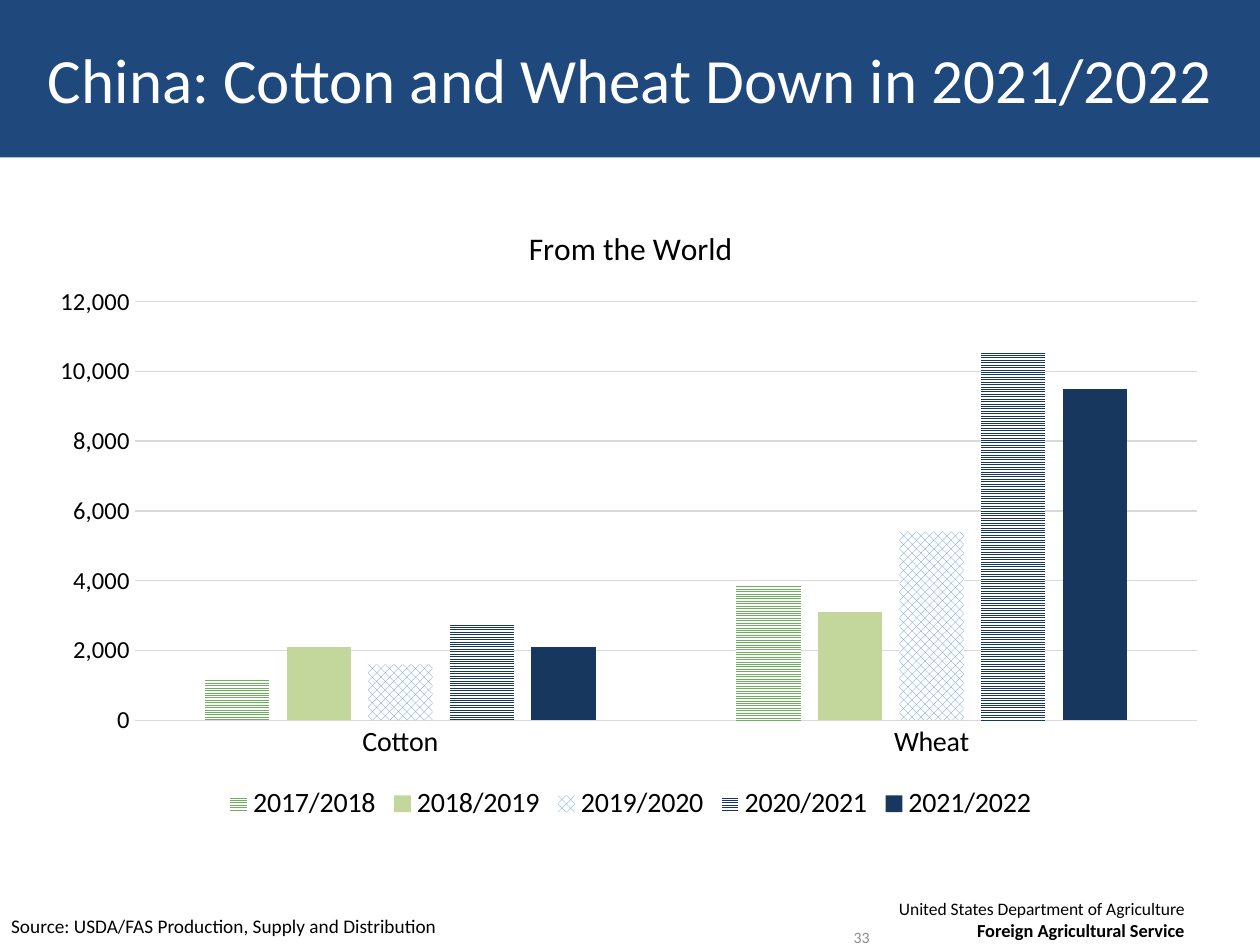
from pptx import Presentation
from pptx.chart.data import CategoryChartData
from pptx.dml.color import RGBColor
from pptx.enum.chart import XL_CHART_TYPE, XL_LEGEND_POSITION, XL_TICK_MARK
from pptx.enum.dml import MSO_PATTERN
from pptx.enum.text import MSO_ANCHOR, MSO_AUTO_SIZE, PP_ALIGN
from pptx.oxml import parse_xml
from pptx.oxml.ns import nsdecls
from pptx.util import Inches, Pt

FONT = "Calibri"
GRID = "D9D9D9"
YEARS = [
    # season, cotton and wheat, colour, pattern
    ("2017/2018", (1200, 3900), "6FAE5E", MSO_PATTERN.NARROW_HORIZONTAL),
    ("2018/2019", (2100, 3100), "C3D69B", None),
    ("2019/2020", (1600, 5400), "558ED5", MSO_PATTERN.PERCENT_50),
    ("2020/2021", (2800, 10600), "17375E", MSO_PATTERN.NARROW_HORIZONTAL),
    ("2021/2022", (2100, 9500), "17375E", None),
]


def rgb(color):
    return RGBColor.from_string(color)


def format_font(font, size, color="000000", bold=False):
    font.name = FONT
    font.size = Pt(size)
    font.bold = bold
    font.color.rgb = rgb(color)


def write(para, text, size, color="000000", bold=False, align=PP_ALIGN.LEFT):
    para.alignment = align
    span = para.add_run()
    span.text = text
    format_font(span.font, size, color, bold)


def place(shape, left, top, width, height):
    shape.left, shape.top = Inches(left), Inches(top)
    shape.width, shape.height = Inches(width), Inches(height)


def add_box(slide, left, top, width, height, anchor=MSO_ANCHOR.TOP):
    box = slide.shapes.add_textbox(Inches(left), Inches(top), Inches(width), Inches(height))
    box.text_frame.word_wrap = True
    box.text_frame.vertical_anchor = anchor
    return box.text_frame


def add_title(slide, text, left, top, width, height):
    title = slide.shapes.title
    place(title, left, top, width, height)
    title.fill.solid()
    title.fill.fore_color.rgb = rgb("1F497D")
    frame = title.text_frame
    frame.auto_size = MSO_AUTO_SIZE.NONE
    frame.vertical_anchor = MSO_ANCHOR.MIDDLE
    write(frame.paragraphs[0], text, 36, "FFFFFF", align=PP_ALIGN.CENTER)


def set_plot_area(chart, **shares):
    """Fix the inner plot area, given as shares of the chart's size."""
    area = chart.element.xpath(".//c:plotArea")[0]
    for layout in area.xpath("./c:layout"):
        area.remove(layout)
    sizes = "".join(f'<c:{key} val="{value}"/>' for key, value in shares.items())
    area.insert(0, parse_xml(
        f'<c:layout {nsdecls("c")}><c:manualLayout><c:layoutTarget val="inner"/>'
        f'<c:xMode val="edge"/><c:yMode val="edge"/>{sizes}</c:manualLayout></c:layout>'))


def style_axis(axis, size):
    axis.major_tick_mark = axis.minor_tick_mark = XL_TICK_MARK.NONE
    format_font(axis.tick_labels.font, size)


def style_line(line):
    line.color.rgb = rgb(GRID)
    line.width = Pt(0.75)


def add_import_chart(slide, left, top, width, height):
    data = CategoryChartData(number_format="#,##0")
    data.categories = ["Cotton", "Wheat"]
    for name, values, _, _ in YEARS:
        data.add_series(name, values)
    chart = slide.shapes.add_chart(
        XL_CHART_TYPE.COLUMN_CLUSTERED, Inches(left), Inches(top),
        Inches(width), Inches(height), data).chart
    format_font(chart.font, 16)

    # Title and legend
    chart.has_title = True
    write(chart.chart_title.text_frame.paragraphs[0], "From the World", 18, align=PP_ALIGN.CENTER)
    chart.chart_title.include_in_layout = False
    chart.has_legend = True
    chart.legend.position = XL_LEGEND_POSITION.BOTTOM
    chart.legend.include_in_layout = False
    format_font(chart.legend.font, 16)

    # Axes
    style_axis(chart.category_axis, 16)
    style_line(chart.category_axis.format.line)
    values = chart.value_axis
    style_axis(values, 14)
    values.minimum_scale, values.maximum_scale, values.major_unit = 0, 12000, 2000
    values.tick_labels.number_format = "#,##0"
    values.tick_labels.number_format_is_linked = False
    values.format.line.fill.background()
    style_line(values.major_gridlines.format.line)

    # Columns
    plot = chart.plots[0]
    plot.gap_width, plot.overlap = 219, -27
    plot.vary_by_categories = False
    for series, (_, _, color, pattern) in zip(plot.series, YEARS):
        fill = series.format.fill
        if pattern is None:
            fill.solid()
        else:
            fill.patterned()
            fill.pattern = pattern
            fill.back_color.rgb = rgb("FFFFFF")
        fill.fore_color.rgb = rgb(color)
    set_plot_area(chart, x=0.08, y=0.16, w=0.9, h=0.67)


def add_footer(slide, top):
    # Source
    source = add_box(slide, -0.01, top + 0.13, 4.17, 0.29)
    write(source.paragraphs[0], "Source: USDA/FAS Production, Supply and Distribution", 11)
    # Slide number
    number = add_box(slide, 6.42, top + 0.13, 0.58, 0.45, MSO_ANCHOR.MIDDLE)
    write(number.paragraphs[0], "33", 9, "8C8C8C", align=PP_ALIGN.RIGHT)
    # Agency
    agency = add_box(slide, 6.92, top, 2.58, 0.45)
    write(agency.paragraphs[0], "United States Department of Agriculture", 10, align=PP_ALIGN.RIGHT)
    write(agency.add_paragraph(), "Foreign Agricultural Service", 10.5, bold=True,
          align=PP_ALIGN.RIGHT)


def main():
    deck = Presentation()
    deck.slide_width, deck.slide_height = Inches(10), Inches(7.5)
    slide = deck.slides.add_slide(deck.slide_layouts[5])
    add_title(slide, "China: Cotton and Wheat Down in 2021/2022", 0, 0, 10, 1.25)
    add_import_chart(slide, 0.32, 1.6, 9.37, 4.96)
    add_footer(slide, 7.08)
    deck.save("out.pptx")


if __name__ == "__main__":
    main()
